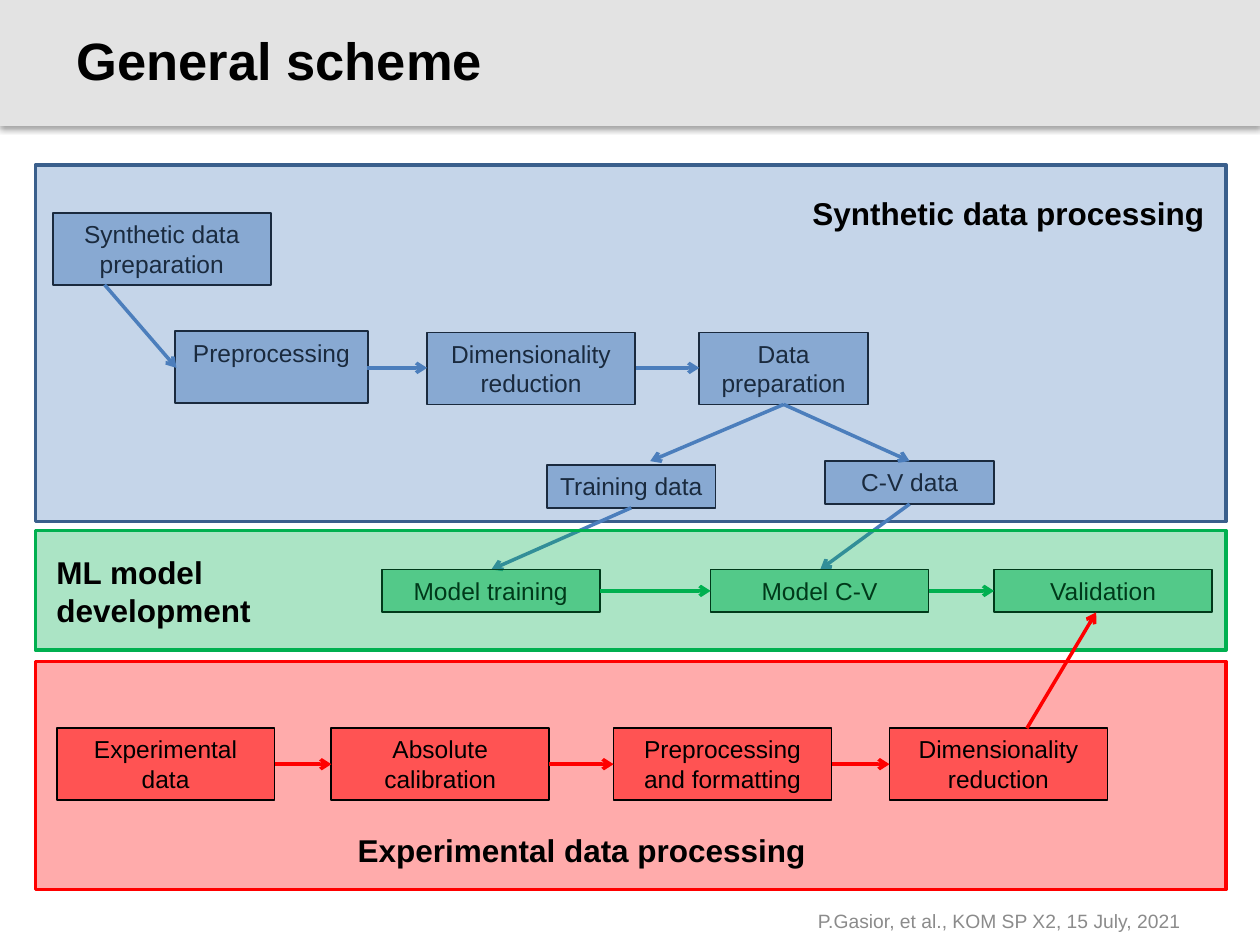
from dataclasses import dataclass

from lxml import etree
from pptx import Presentation
from pptx.dml.color import RGBColor
from pptx.enum.shapes import MSO_CONNECTOR, MSO_SHAPE
from pptx.enum.text import MSO_ANCHOR, PP_ALIGN
from pptx.oxml.ns import qn
from pptx.util import Inches, Pt

RECTANGLE = MSO_SHAPE.RECTANGLE
STRAIGHT = MSO_CONNECTOR.STRAIGHT
TOP, MIDDLE = MSO_ANCHOR.TOP, MSO_ANCHOR.MIDDLE
LEFT, CENTER, RIGHT = PP_ALIGN.LEFT, PP_ALIGN.CENTER, PP_ALIGN.RIGHT


@dataclass(frozen=True)
class Theme:
    """Colours, opacities and type sizes of the slide."""
    font: str = "Arial"
    black: str = "000000"
    header: str = "E3E3E3"
    footer: str = "8B8B8B"
    blue: str = "4F81BD"
    blue_edge: str = "3A5F8C"
    blue_arrow: str = "4B7EBC"
    green: str = "00B050"
    red: str = "FF0000"
    step_opacity: int = 51
    panel_opacity: int = 33
    title_size: int = 30
    heading_size: int = 18
    step_size: int = 14
    footer_size: int = 11


THEME = Theme()
STEP_WIDTH, ONE_LINE, TWO_LINES = 1.73, 0.34, 0.57
PANEL_LEFT, PANEL_WIDTH = 0.28, 9.45
MODEL_TOP, EXPERIMENT_TOP = 4.52, 5.78

SYNTHETIC_STEPS = [
    (["Synthetic data", "preparation"], 0.42, 1.69, STEP_WIDTH, TWO_LINES),
    (["Preprocessing"], 1.39, 2.63, 1.53, TWO_LINES),
    (["Data", "preparation"], 5.55, 2.64, 1.34, TWO_LINES),
    (["Dimensionality", "reduction"], 3.39, 2.64, 1.65, TWO_LINES),
    (["Training data"], 4.34, 3.69, 1.34, ONE_LINE),
    (["C-V data"], 6.55, 3.66, 1.34, ONE_LINE),
]
SYNTHETIC_ARROWS = [
    (2.91, 2.92, 3.39, 2.92), (5.05, 2.92, 5.55, 2.92),
    (6.22, 3.21, 5.16, 3.66), (6.22, 3.21, 7.22, 3.66),
    (0.83, 2.26, 1.4, 2.92),
]
DATA_TO_MODEL_ARROWS = [(5.01, 4.03, 3.9, 4.52), (7.22, 4, 6.51, 4.52)]
MODEL_STEPS = [(["Model training"], 3.03), (["Model C-V"], 5.64), (["Validation"], 7.89)]
EXPERIMENT_STEPS = [
    (["Experimental", "data"], 0.45),
    (["Absolute", "calibration"], 2.63),
    (["Preprocessing and formatting"], 4.87),
    (["Dimensionality", "reduction"], 7.06),
]


def add_span(para, text, size, color=THEME.black, bold=False):
    """Add one styled run to a paragraph."""
    span = para.add_run()
    span.text = text
    span.font.name = THEME.font
    span.font.size = Pt(size)
    span.font.bold = bold
    span.font.color.rgb = RGBColor.from_string(color)


def add_rectangle(page, left, top, width, height, color, opacity=100, edge=None, weight=1):
    """Add a rectangle with an optional outline and translucent fill."""
    box = page.shapes.add_shape(RECTANGLE, Inches(left), Inches(top), Inches(width), Inches(height))
    box.shadow.inherit = False
    box.fill.solid()
    box.fill.fore_color.rgb = RGBColor.from_string(color)
    if opacity < 100:
        tint = box.fill._xPr.find(".//" + qn("a:srgbClr"))
        etree.SubElement(tint, qn("a:alpha"), val=str(opacity * 1000))
    if edge:
        box.line.color.rgb = RGBColor.from_string(edge)
        box.line.width = Pt(weight)
    else:
        box.line.fill.background()
    return box


def add_header(page):
    """Add the grey title band with its soft shadow."""
    band = add_rectangle(page, 0, 0, 10, 1, THEME.header)
    effects = band._element.spPr.find(qn("a:effectLst"))
    shadow = etree.SubElement(effects, qn("a:outerShdw"), blurRad=str(Pt(3.1)),
                              dist=str(Pt(1.8)), dir=str(90 * 60000), rotWithShape="0")
    shade = etree.SubElement(shadow, qn("a:srgbClr"), val=THEME.black)
    etree.SubElement(shade, qn("a:alpha"), val="35000")


def add_panel(page, top, height, color, edge):
    """Add the translucent background of one stage."""
    add_rectangle(page, PANEL_LEFT, top, PANEL_WIDTH, height, color, THEME.panel_opacity, edge, 2)


def add_step(page, lines, left, top, width, height, color):
    """Add a step box with one paragraph per line."""
    box = add_rectangle(page, left, top, width, height, color, THEME.step_opacity, THEME.black)
    frame = box.text_frame
    frame.word_wrap = True
    frame.vertical_anchor = TOP
    for index, line in enumerate(lines):
        para = frame.add_paragraph() if index else frame.paragraphs[0]
        para.alignment = CENTER
        add_span(para, line, THEME.step_size)


def add_arrow(page, start_x, start_y, end_x, end_y, color):
    """Add a straight arrow that points at its end."""
    arrow = page.shapes.add_connector(STRAIGHT, Inches(start_x), Inches(start_y),
                                      Inches(end_x), Inches(end_y))
    arrow.line.color.rgb = RGBColor.from_string(color)
    arrow.line.width = Pt(2)
    etree.SubElement(arrow.line._get_or_add_ln(), qn("a:tailEnd"), type="arrow")
    etree.SubElement(arrow._element.spPr, qn("a:effectLst"))


def add_row(page, steps, top, height, color):
    """Add a row of equal steps joined by arrows."""
    for lines, left in steps:
        add_step(page, lines, left, top, STEP_WIDTH, height, color)
    for (_, left), (_, following) in zip(steps, steps[1:]):
        middle = top + height / 2
        add_arrow(page, left + STEP_WIDTH, middle, following, middle, color)


def add_text(page, lines, left, top, width, height, size, color=THEME.black,
             bold=True, align=LEFT, anchor=TOP, wrap=False):
    """Add a text box whose lines share one paragraph."""
    box = page.shapes.add_textbox(Inches(left), Inches(top), Inches(width), Inches(height))
    frame = box.text_frame
    frame.word_wrap = wrap
    frame.vertical_anchor = anchor
    para = frame.paragraphs[0]
    para.alignment = align
    for index, line in enumerate(lines):
        if index:
            para.add_line_break()
        add_span(para, line, size, color, bold)
    return para


def main():
    """Build the slide and save it."""
    deck = Presentation()
    deck.slide_width, deck.slide_height = Inches(10), Inches(7.5)
    page = deck.slides.add_slide(deck.slide_layouts[6])

    add_header(page)
    add_text(page, ["P.Gasior, et al., KOM SP X2, 15 July, 2021"], 0.51, 7.16, 8.96, 0.29,
             THEME.footer_size, THEME.footer, False, RIGHT, MIDDLE, True)
    title = add_text(page, ["General scheme"], 0.51, 0.25, 8.25, 0.5,
                     THEME.title_size, anchor=MIDDLE, wrap=True)
    title.line_spacing = Pt(32)

    for step in SYNTHETIC_STEPS:
        add_step(page, *step, THEME.blue)
    for ends in SYNTHETIC_ARROWS:
        add_arrow(page, *ends, THEME.blue_arrow)
    add_panel(page, 1.31, 2.83, THEME.blue, THEME.blue_edge)
    add_text(page, ["Synthetic data processing"], 6.35, 1.49, 3.34, 0.4, THEME.heading_size)

    for ends in DATA_TO_MODEL_ARROWS:
        add_arrow(page, *ends, THEME.blue_arrow)
    add_row(page, MODEL_STEPS, MODEL_TOP, ONE_LINE, THEME.green)
    add_panel(page, 4.21, 0.95, THEME.green, THEME.green)
    add_text(page, ["ML model", "development"], 0.35, 4.34, 1.83, 0.71, THEME.heading_size)

    add_panel(page, 5.25, 1.81, THEME.red, THEME.red)
    add_row(page, EXPERIMENT_STEPS, EXPERIMENT_TOP, TWO_LINES, THEME.red)
    add_arrow(page, 8.15, EXPERIMENT_TOP, 8.7, MODEL_TOP + ONE_LINE, THEME.red)
    add_text(page, ["Experimental data processing"], 2.74, 6.55, 3.79, 0.4, THEME.heading_size)

    deck.save("out.pptx")


if __name__ == "__main__":
    main()
